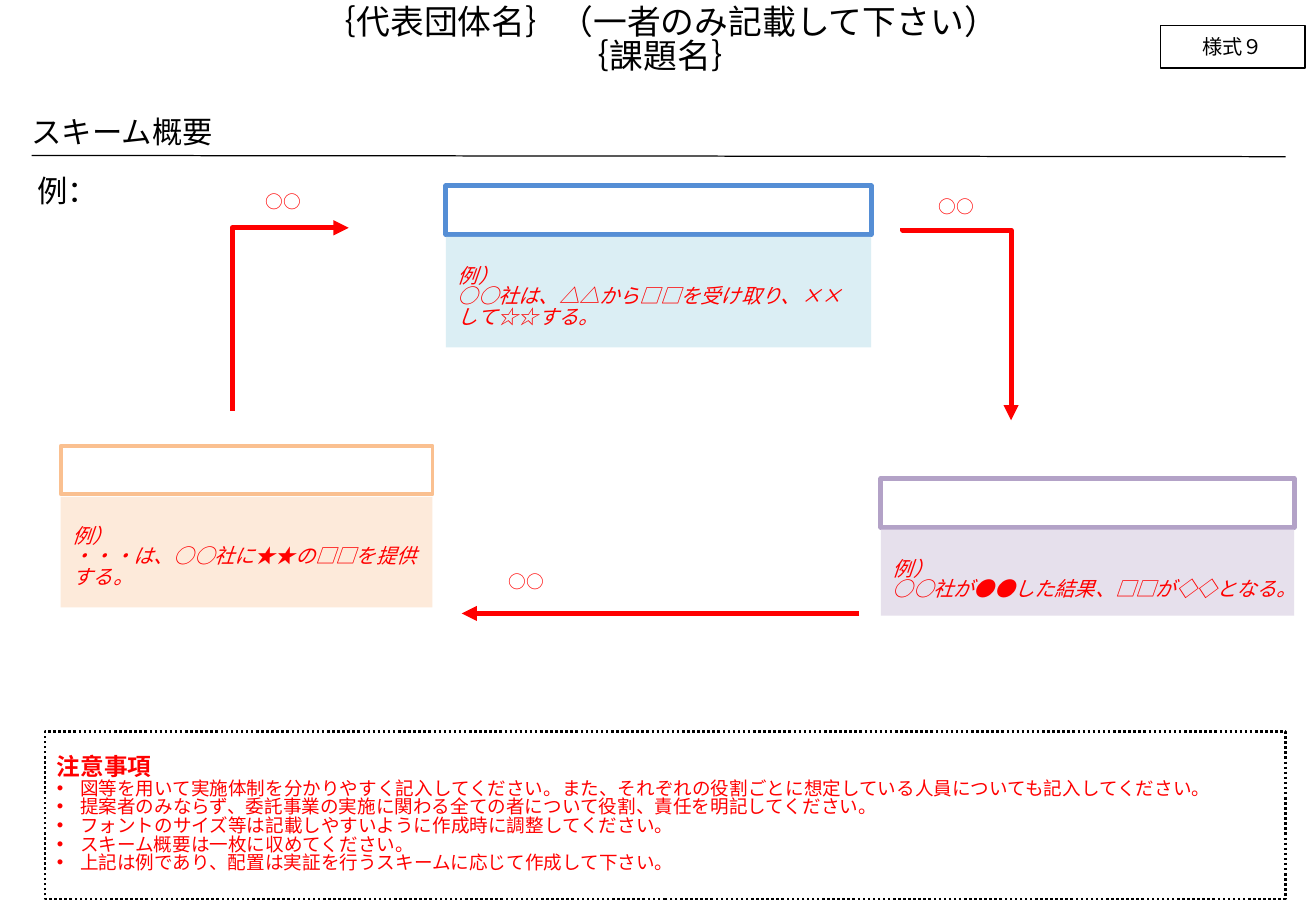
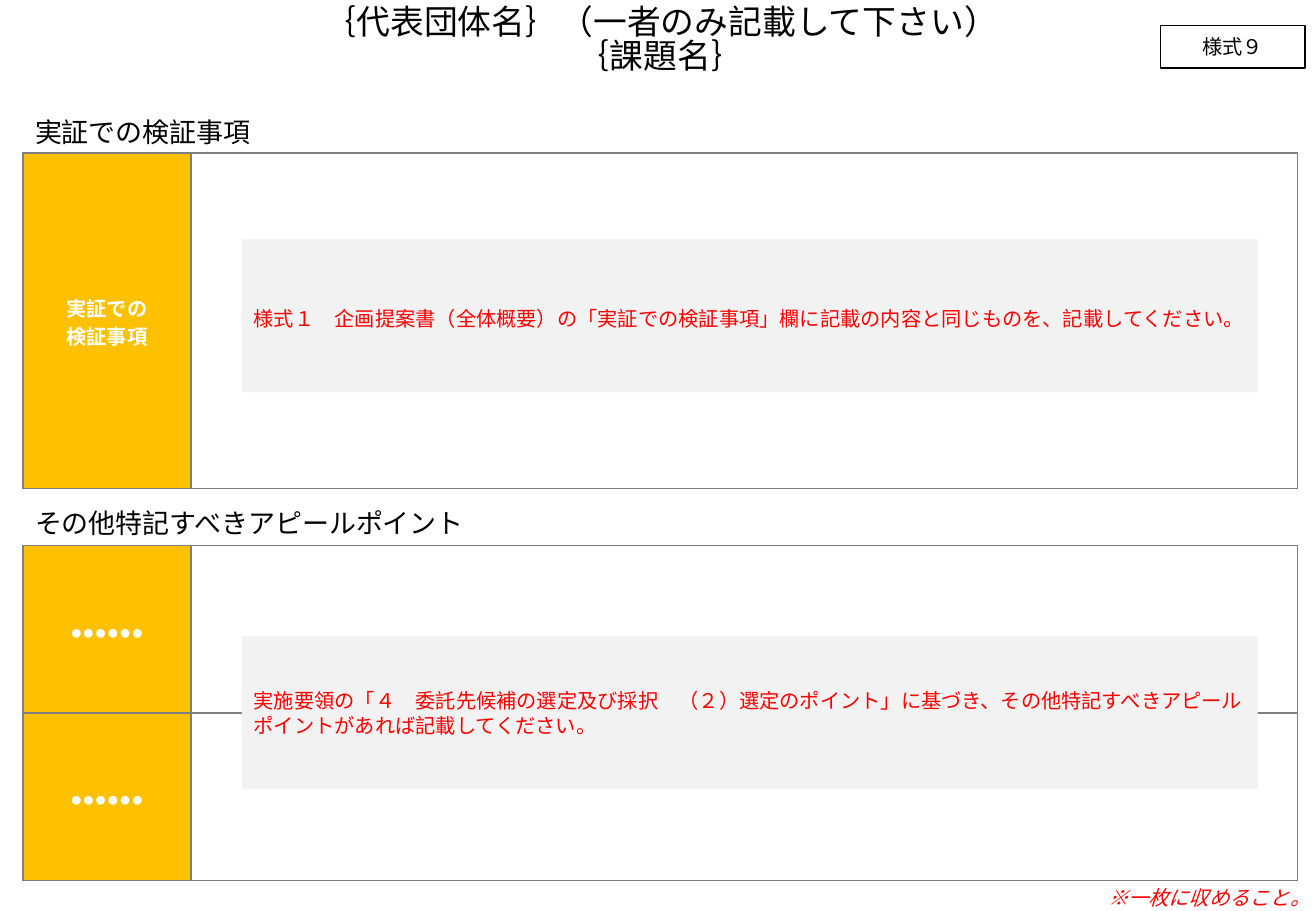
from dataclasses import dataclass

import pptx
import pptx.dml.color
import pptx.enum.dml
import pptx.enum.shapes
import pptx.enum.text
import pptx.oxml
import pptx.oxml.ns
import pptx.util

# Lengths are columns and rows of a grid with ten cells to the inch.
CELL = 0.1
SLIDE_COLS, SLIDE_ROWS = 108.3, 75

BLACK, WHITE, RED = "000000", "FFFFFF", "FF0000"
AMBER, PALE_GRAY, RULE_GRAY = "FFC000", "F2F2F2", "808080"
GOTHIC, CALIBRI, ARIAL = "Noto Sans CJK JP", "Calibri", "Arial"
SPACING = {GOTHIC: 0.84, CALIBRI: 1.0, ARIAL: 1.25}

ALIGN = pptx.enum.text.PP_ALIGN
ANCHOR = pptx.enum.text.MSO_ANCHOR
CONNECTOR = pptx.enum.shapes.MSO_CONNECTOR


@dataclass(frozen=True)
class Area:
    col: float
    row: float
    cols: float
    rows: float

    def emu(self):
        return [grid(v) for v in (self.col, self.row, self.cols, self.rows)]


@dataclass(frozen=True)
class Style:
    size: float
    font: str = GOTHIC
    color: str = RED
    bold: bool = False
    italic: bool = False
    align: ALIGN = ALIGN.LEFT


@dataclass(frozen=True)
class Role:
    """A header frame with an example description under it."""
    col: float
    row: float
    cols: float
    body_rows: float
    frame: str
    weight: float
    fill: str
    example: str


TITLE = Style(20, color=BLACK, align=ALIGN.CENTER)
TAG = Style(12, CALIBRI, BLACK, align=ALIGN.CENTER)
HEADING = Style(18, color=BLACK)
TABLE_HEADING = Style(16, CALIBRI, BLACK)
EXAMPLE = Style(12, italic=True)
FLOW_LABEL = Style(10.5, align=ALIGN.CENTER)
NOTE_HEAD = Style(14, bold=True)
NOTE_ITEM = Style(11)
ROW_HEAD = Style(12, ARIAL, WHITE, bold=True, align=ALIGN.CENTER)

ROLES = [
    Role(36.7, 15.3, 35, 9.1, "558ED5", 3, "DBEEF4",
         "○○社は、△△から□□を受け取り、××して☆☆する。"),
    Role(5, 36.7, 30.6, 9.1, "FAC090", 2.25, "FDEADA",
         "・・・は、○○社に★★の□□を提供する。"),
    Role(72.5, 39.4, 34, 7.1, "B3A2C7", 3, "E6E0EC",
         "○○社が●●した結果、□□が◇◇となる。"),
]
LABEL_CORNERS = [(20.3, 15.5), (75.7, 15.9), (40.3, 46.8)]
NOTES = [
    "図等を用いて実施体制を分かりやすく記入してください。また、それぞれの役割ごとに想定している人員についても記入してください。",
    "提案者のみならず、委託事業の実施に関わる全ての者について役割、責任を明記してください。",
    "フォントのサイズ等は記載しやすいように作成時に調整してください。",
    "スキーム概要は一枚に収めてください。",
    "上記は例であり、配置は実証を行うスキームに応じて作成して下さい。",
]


def grid(cells: float) -> int:
    return pptx.util.Inches(cells * CELL)


def rgb(value: str):
    return pptx.dml.color.RGBColor.from_string(value)


def add_xml(parent, tag: str, **attrs):
    el = pptx.oxml.ns.qn(tag)
    child = parent.makeelement(el, attrs)
    parent.append(child)
    return child


# Text
def format_run(r, style: Style) -> None:
    f = r.font
    f.size, f.name = pptx.util.Pt(style.size), style.font
    f.bold, f.italic = style.bold, style.italic
    f.color.rgb = rgb(style.color)
    add_xml(r.font._element, "a:ea", typeface=style.font)


def write(tf, lines: list[str], style: Style) -> None:
    tf.text = "\n".join(lines)
    for p in tf.paragraphs:
        p.alignment = style.align
        p.line_spacing = SPACING[style.font]
        for r in p.runs:
            format_run(r, style)


def set_insets(tf, left: float, top: float, right: float, bottom: float) -> None:
    tf.margin_left, tf.margin_top = grid(left), grid(top)
    tf.margin_right, tf.margin_bottom = grid(right), grid(bottom)


def add_text(s, area: Area, lines: list[str], style: Style):
    tf = s.shapes.add_textbox(*area.emu()).text_frame
    tf.word_wrap = True
    write(tf, lines, style)
    return tf


# Shapes and lines
def add_box(s, area: Area, fill: str = "", line: str = "", weight: float = 0.75,
            anchor=ANCHOR.MIDDLE):
    sp = s.shapes.add_shape(pptx.enum.shapes.MSO_SHAPE.RECTANGLE, *area.emu())
    sp.shadow.inherit = False
    if fill:
        sp.fill.solid()
        sp.fill.fore_color.rgb = rgb(fill)
    else:
        sp.fill.background()
    if line:
        sp.line.color.rgb = rgb(line)
        sp.line.width = pptx.util.Pt(weight)
    else:
        sp.line.fill.background()
    sp.text_frame.word_wrap = True
    sp.text_frame.vertical_anchor = anchor
    return sp


def add_line(s, start: tuple, end: tuple, color: str, weight: float,
             arrow: bool = False, kind=CONNECTOR.STRAIGHT):
    cxn = s.shapes.add_connector(kind, *map(grid, (*start, *end)))
    cxn.line.color.rgb = rgb(color)
    cxn.line.width = pptx.util.Pt(weight)
    if arrow:
        add_xml(cxn.line._get_or_add_ln(), "a:tailEnd", type="triangle")
    add_xml(cxn._element.spPr, "a:effectLst")
    return cxn


def add_elbow(s, start: tuple, end: tuple, turn: int, bend: float) -> None:
    """Arrow leaving vertically; turn is 1 (90 degrees) or -1 (270 degrees)."""
    mid_x, mid_y = (start[0] + end[0]) / 2, (start[1] + end[1]) / 2
    dx, dy = turn * (start[0] - mid_x), turn * (start[1] - mid_y)
    cxn = add_line(s, (mid_x + dy, mid_y - dx), (mid_x - dy, mid_y + dx),
                   RED, 3, arrow=True, kind=CONNECTOR.ELBOW)
    spPr = cxn._element.spPr
    spPr.xfrm.set("rot", str(turn * 90 % 360 * 60000))
    av = spPr.find(pptx.oxml.ns.qn("a:prstGeom")).get_or_add_avLst()
    add_xml(av, "a:gd", name="adj1", fmla=f"val {round(bend * 100000)}")


# Table with amber row heads
def add_rows(s, row: float, heads: list[list[str]]) -> None:
    area = Area(1.9, row, 104.9, 27.6)
    table = s.shapes.add_table(len(heads), 2, *area.emu()).table
    table.first_row = table.horz_banding = False
    table.columns[0].width, table.columns[1].width = grid(13.8), grid(91.1)
    for i, lines in enumerate(heads):
        table.rows[i].height = grid(area.rows / len(heads))
        write(table.cell(i, 0).text_frame, lines, ROW_HEAD)
        for j, color in enumerate((AMBER, WHITE)):
            cell = table.cell(i, j)
            cell.vertical_anchor = ANCHOR.MIDDLE
            tcPr = cell._tc.get_or_add_tcPr()
            for side in "LRTB":
                ln = add_xml(tcPr, f"a:ln{side}", w=str(pptx.util.Pt(1)))
                add_xml(add_xml(ln, "a:solidFill"), "a:srgbClr", val=RULE_GRAY)
            cell.fill.solid()
            cell.fill.fore_color.rgb = rgb(color)


def add_hint(s, row: float):
    return add_box(s, Area(19.9, row, 83.6, 12.6), PALE_GRAY).text_frame


def add_role(s, role: Role) -> None:
    add_box(s, Area(role.col, role.row, role.cols, 4), "", role.frame, role.weight)
    body = Area(role.col, role.row + 4.2, role.cols, role.body_rows)
    tf = add_box(s, body, role.fill, anchor=ANCHOR.TOP).text_frame
    set_insets(tf, 1, 2.5, 1, 0.5)
    write(tf, ["例）", role.example], EXAMPLE)


def add_notes(s) -> None:
    sp = add_box(s, Area(3.7, 60.2, 102.1, 13.8), WHITE, BLACK, 1.5)
    sp.line.dash_style = pptx.enum.dml.MSO_LINE.ROUND_DOT
    tf = sp.text_frame
    write(tf, ["注意事項", *NOTES], NOTE_ITEM)
    head, *items = tf.paragraphs
    head.runs[0].font.size = pptx.util.Pt(NOTE_HEAD.size)
    head.runs[0].font.bold = NOTE_HEAD.bold
    for p in items:
        pPr = p._p.get_or_add_pPr()
        pPr.set("marL", str(grid(1.9)))
        pPr.set("indent", str(-grid(1.9)))
        add_xml(pPr, "a:buFont", typeface=ARIAL)
        add_xml(pPr, "a:buChar", char="•")


# Slides
def new_slide(prs):
    s = prs.slides.add_slide(prs.slide_layouts[6])
    add_text(s, Area(0.4, 0.1, 107.9, 7.8),
             ["｛代表団体名｝（一者のみ記載して下さい）", "｛課題名｝"], TITLE)
    tag = add_box(s, Area(95.5, 2.1, 11.9, 3.5), WHITE, BLACK)
    write(tag.text_frame, ["様式９"], TAG)
    return s


def build_scheme(prs) -> None:
    s = new_slide(prs)
    tf = add_text(s, Area(2.6, 7.5, 103.3, 5.3), ["スキーム概要"], HEADING)
    set_insets(tf, 0, 0, 0, 0.5)
    tf.vertical_anchor = ANCHOR.BOTTOM
    add_line(s, (2.6, 12.8), (105.8, 12.9), BLACK, 0.75)
    add_text(s, Area(2.1, 13.7, 5.8, 4), ["例："], Style(18, CALIBRI, BLACK))
    add_notes(s)
    for role in ROLES:
        add_role(s, role)
    for col, row in LABEL_CORNERS:
        add_text(s, Area(col, row, 6, 2.8), ["○○"], FLOW_LABEL)
    add_elbow(s, (19.1, 33.8), (28.7, 18.75), 1, 1.0)
    add_elbow(s, (74.3, 18.8), (83.2, 34.6), -1, 0.01)
    add_line(s, (70.7, 50.5), (38, 50.5), RED, 3, arrow=True)


def build_points(prs) -> None:
    s = new_slide(prs)
    add_text(s, Area(90.2, 72.4, 18.1, 3), ["※一枚に収めること。"],
             Style(12, CALIBRI, italic=True))

    add_text(s, Area(1.9, 9, 104.9, 3.7), ["実証での検証事項"], TABLE_HEADING)
    add_rows(s, 12.6, [["実証での", "検証事項"]])
    write(add_hint(s, 19.7),
          ["様式１　企画提案書（全体概要）の「実証での検証事項」欄に記載の内容と同じものを、記載してください。"],
          Style(12, ARIAL))

    add_text(s, Area(1.9, 41.2, 104.9, 3.7), ["その他特記すべきアピールポイント"],
             TABLE_HEADING)
    add_rows(s, 44.9, [["●●●●●●"]] * 2)
    write(add_hint(s, 52.4),
          ["実施要領の「４　委託先候補の選定及び採択　（２）選定のポイント」に基づき、"
           "その他特記すべきアピールポイントがあれば記載してください。"],
          Style(12, CALIBRI))


def main() -> None:
    prs = pptx.Presentation()
    prs.slide_width, prs.slide_height = grid(SLIDE_COLS), grid(SLIDE_ROWS)
    build_scheme(prs)
    build_points(prs)
    prs.save("out.pptx")


if __name__ == "__main__":
    main()
